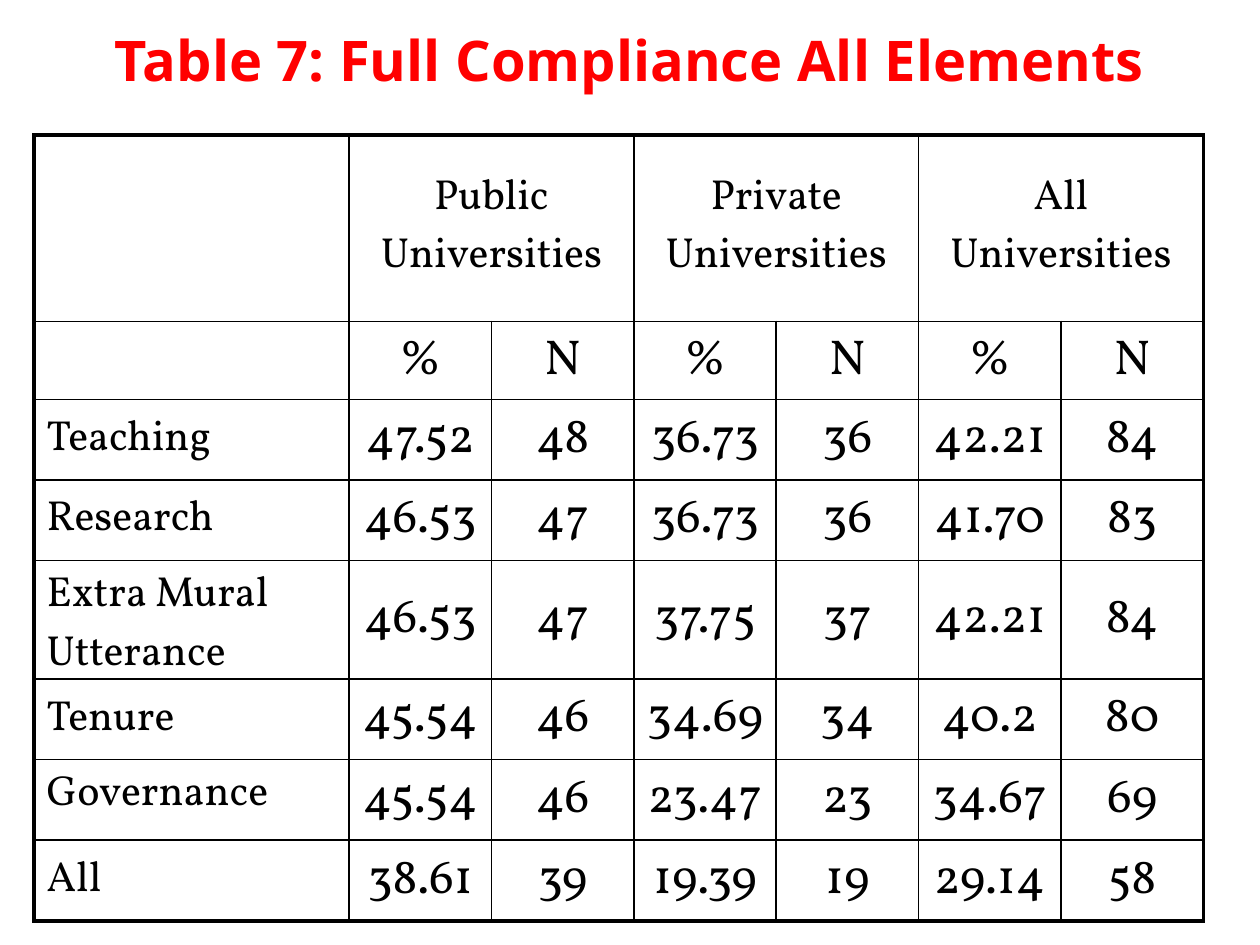
from lxml import etree
from pptx import Presentation
from pptx.dml.color import RGBColor
from pptx.enum import text
from pptx.oxml import ns
from pptx.util import Inches, Pt

RED = RGBColor(0xFF, 0x00, 0x00)
BLACK = RGBColor(0x00, 0x00, 0x00)

TITLE = "Table 7: Full Compliance All Elements"
GROUPS = ["Public Universities", "Private Universities", "All Universities"]
MEASURES = ["%", "N"]
RESULTS = [
    ("Teaching", "47.52", "48", "36.73", "36", "42.21", "84"),
    ("Research", "46.53", "47", "36.73", "36", "41.70", "83"),
    ("Extra Mural Utterance", "46.53", "47", "37.75", "37", "42.21", "84"),
    ("Tenure", "45.54", "46", "34.69", "34", "40.2", "80"),
    ("Governance", "45.54", "46", "23.47", "23", "34.67", "69"),
    ("All", "38.61", "39", "19.39", "19", "29.14", "58"),
]
COLUMN_WIDTHS = [2.5] + [1.13] * 6
ROW_HEIGHTS = [1.48, 0.62, 0.64, 0.64, 0.94, 0.64, 0.64, 0.64]
THIN, THICK = 1, 2.25


def add_run(para, words, font_name, size, color, bold=False):
    span = para.add_run()
    span.text = words
    span.font.name = font_name
    span.font.size = Pt(size)
    span.font.bold = bold
    span.font.color.rgb = color


def set_borders(cell, widths):
    """Draw the cell's borders; they must come before its fill in the XML."""
    properties = cell._tc.get_or_add_tcPr()
    for place, (side, width) in enumerate(widths.items()):
        line = etree.Element(ns.qn(f"a:ln{side}"), w=str(Pt(width)))
        fill = etree.SubElement(line, ns.qn("a:solidFill"))
        etree.SubElement(fill, ns.qn("a:srgbClr"), val=str(BLACK))
        properties.insert(place, line)


deck = Presentation()
deck.slide_width, deck.slide_height = Inches(10), Inches(7.5)
page = deck.slides.add_slide(deck.slide_layouts[6])

# Title
box = page.shapes.add_textbox(0, 0, Inches(10), Inches(0.94))
frame = box.text_frame
frame.word_wrap = True
frame.margin_left = frame.margin_right = Inches(0.2)
frame.margin_top = frame.margin_bottom = Inches(0.2)
frame.paragraphs[0].alignment = text.PP_ALIGN.CENTER
add_run(frame.paragraphs[0], TITLE, "Open Sans", 32, RED, bold=True)

# Table rows: group headings, measures, results
group_row = [""] + [words for group in GROUPS for words in (group, "")]
rows = [group_row, [""] + MEASURES * len(GROUPS)] + RESULTS
last_row, last_column = len(rows) - 1, len(COLUMN_WIDTHS) - 1

table = page.shapes.add_table(
    len(rows), len(COLUMN_WIDTHS),
    Inches(0.27), Inches(1.07), Inches(9.29), Inches(6.22)).table
table.first_row = table.horz_banding = False
for column, width in zip(table.columns, COLUMN_WIDTHS):
    column.width = Inches(width)
for row, height in zip(table.rows, ROW_HEIGHTS):
    row.height = Inches(height)
for c in range(1, last_column, 2):
    table.cell(0, c).merge(table.cell(0, c + 1))

# Cells: thick outer frame, thin inner lines
for r, row in enumerate(rows):
    for c, words in enumerate(row):
        cell = table.cell(r, c)
        cell.fill.background()
        right_edge = c == last_column or (r == 0 and c == last_column - 1)
        set_borders(cell, {
            "L": THICK if c == 0 else THIN,
            "R": THICK if right_edge else THIN,
            "T": THICK if r == 0 else THIN,
            "B": THICK if r == last_row else THIN,
        })
        if not words:
            continue
        top = r == 1 or words == "Governance"
        cell.vertical_anchor = text.MSO_ANCHOR.TOP if top else text.MSO_ANCHOR.MIDDLE
        para = cell.text_frame.paragraphs[0]
        para.alignment = text.PP_ALIGN.LEFT if c == 0 else text.PP_ALIGN.CENTER
        add_run(para, words, "Vollkorn", 24 if r == 0 or c == 0 else 28, BLACK)

deck.save("out.pptx")
